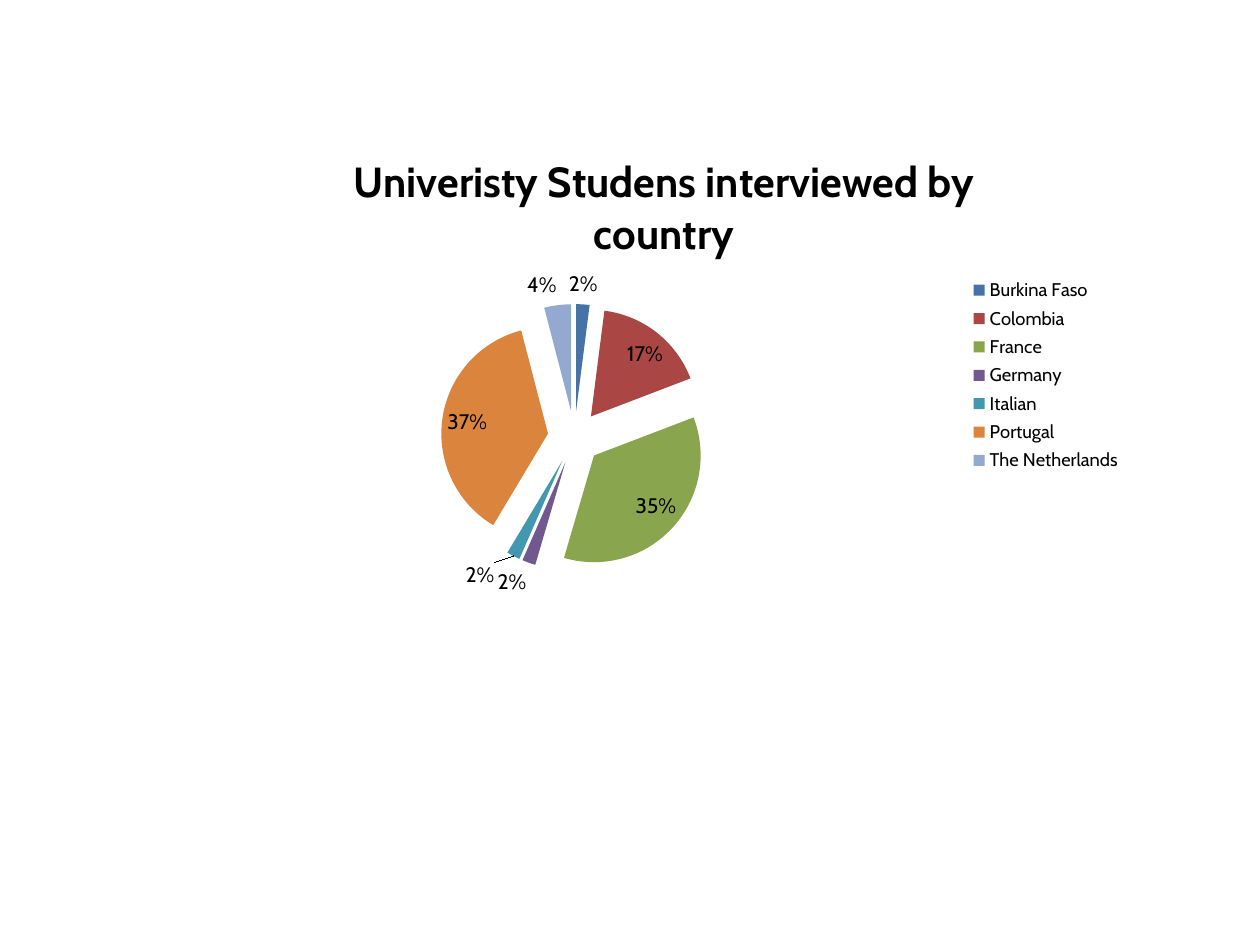
from typing import NamedTuple

from lxml.etree import SubElement
from pptx import Presentation
from pptx.chart.data import CategoryChartData
from pptx.dml.color import RGBColor
from pptx.enum.chart import XL_CHART_TYPE as ChartType
from pptx.enum.chart import XL_LABEL_POSITION as LabelPosition
from pptx.enum.chart import XL_LEGEND_POSITION as LegendPosition
from pptx.oxml import parse_xml
from pptx.oxml.ns import nsdecls, qn
from pptx.util import Inches, Pt


class Country(NamedTuple):
    name: str
    share: int
    color: str


COUNTRIES = [
    Country("Burkina Faso", 2, "4572A7"),
    Country("Colombia", 17, "AA4643"),
    Country("France", 35, "89A54E"),
    Country("Germany", 2, "71588F"),
    Country("Italian", 2, "4198AF"),
    Country("Portugal", 37, "DB843D"),
    Country("The Netherlands", 4, "93A9CF"),
]


def rgb(value: str) -> RGBColor:
    return RGBColor.from_string(value)


def style_font(font, size: float, name: str = "Cabin", bold: bool = False) -> None:
    font.name = name
    font.size = Pt(size)
    font.bold = bold
    font.color.rgb = rgb("000000")


def place(parent, after: str, inner: bool = False, **fractions: float) -> None:
    for old in parent.findall(qn("c:layout")):
        parent.remove(old)
    layout = parse_xml(f"<c:layout {nsdecls('c')}/>")
    manual = SubElement(layout, qn("c:manualLayout"))
    if inner:
        SubElement(manual, qn("c:layoutTarget")).set("val", "inner")
    for mode in ("xMode", "yMode"):
        SubElement(manual, qn(f"c:{mode}")).set("val", "edge")
    for key, fraction in fractions.items():
        SubElement(manual, qn(f"c:{key}")).set("val", str(fraction))
    if after:
        parent.find(qn(after)).addnext(layout)
    else:
        parent.insert(0, layout)


def add_title(chart, text: str) -> None:
    chart.has_title = True
    paragraph = chart.chart_title.text_frame.paragraphs[0]
    run = paragraph.add_run()
    run.text = text
    style_font(run.font, 24, bold=True)
    place(chart.chart_title._element, "c:tx", x=0.17, y=0.04)


def add_legend(chart) -> None:
    chart.has_legend = True
    chart.legend.position = LegendPosition.RIGHT
    chart.legend.include_in_layout = False
    style_font(chart.legend.font, 10.5)
    place(chart.legend._element, "c:legendPos", x=0.82, y=0.3, w=0.17, h=0.41)


def style_slices(series) -> None:
    explosion = parse_xml(f'<c:explosion {nsdecls("c")} val="25"/>')
    series._element.find(qn("c:tx")).addnext(explosion)
    for index, country in enumerate(COUNTRIES):
        fill = series.points[index].format.fill
        fill.solid()
        fill.fore_color.rgb = rgb(country.color)


def add_labels(series) -> None:
    labels = series.data_labels
    labels.show_value = False
    labels.show_percentage = True
    labels.number_format = "0%"
    labels.number_format_is_linked = False
    labels.position = LabelPosition.BEST_FIT
    style_font(labels.font, 12)


def main() -> None:
    presentation = Presentation()
    presentation.slide_width = Inches(10)
    presentation.slide_height = Inches(7.5)
    slide = presentation.slides.add_slide(presentation.slide_layouts[6])

    data = CategoryChartData()
    data.categories = [country.name for country in COUNTRIES]
    data.add_series("Series 1", [country.share for country in COUNTRIES])
    chart = slide.shapes.add_chart(
        ChartType.PIE, Inches(1.46), Inches(0.99), Inches(7.56), Inches(3.94), data
    ).chart
    style_font(chart.font, 10, "Calibri")
    add_title(chart, "Univeristy Studens interviewed by country")
    add_legend(chart)

    plot = chart.plots[0]
    plot.vary_by_categories = True
    style_slices(plot.series[0])
    add_labels(plot.series[0])
    plot_area = chart._chartSpace.chart.plotArea
    place(plot_area, "", inner=True, x=0.27, y=0.36, w=0.28, h=0.54)
    presentation.save("out.pptx")


if __name__ == "__main__":
    main()
